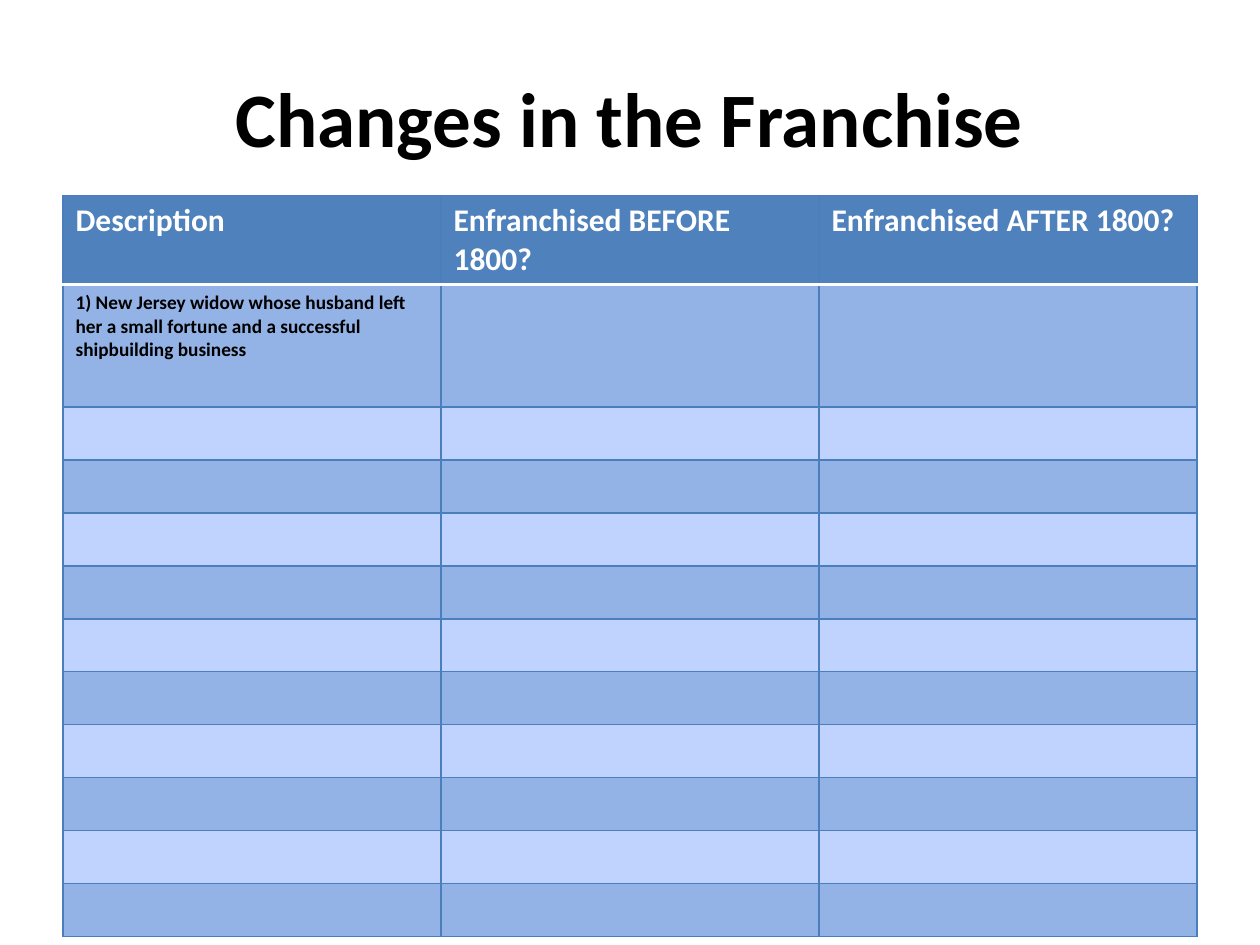
from dataclasses import dataclass

from lxml.etree import SubElement
from pptx import Presentation
from pptx.dml.color import RGBColor
from pptx.enum.text import MSO_ANCHOR, PP_ALIGN
from pptx.oxml.ns import qn
from pptx.util import Pt


@dataclass(frozen=True)
class Theme:
    font: str = "Calibri"
    ink: str = "000000"
    white: str = "FFFFFF"
    head: str = "4F81BD"
    dark: str = "93B2E5"
    light: str = "C0D3FF"
    line: str = "4B7EBC"
    title: int = 44
    label: int = 18
    body: int = 11


THEME = Theme()
HEADS = ["Description", "Enfranchised BEFORE 1800?", "Enfranchised AFTER 1800?"]
CASE = ("1) New Jersey widow whose husband left her a small fortune "
        "and a successful shipbuilding business")
ROWS = [HEADS, [CASE, "", ""]] + [[""] * 3] * 10
HEIGHTS = [51, 70] + [30.3] * 10


def style(frame, size, color):
    for para in frame.paragraphs:
        font = para.font
        font.name, font.size, font.bold = THEME.font, Pt(size), True
        font.color.rgb = RGBColor.from_string(color)


def edge(cell, side, color, width):
    props = cell._tc.get_or_add_tcPr()
    line = SubElement(props, qn(f"a:ln{side}"), w=str(Pt(width)))
    fill = SubElement(line, qn("a:solidFill"))
    SubElement(fill, qn("a:srgbClr"), val=color)


def frame_cell(cell, row):
    """Rule all four sides, with a white line under the header."""
    white_side = {0: "B", 1: "T"}.get(row)
    for side in "LRTB":
        if side == white_side:
            edge(cell, side, THEME.white, 2)
        else:
            edge(cell, side, THEME.line, 0.75)


def add_title(slide, left, top, width, height):
    box = slide.shapes.add_textbox(Pt(left), Pt(top), Pt(width), Pt(height))
    frame = box.text_frame
    frame.word_wrap = True
    frame.vertical_anchor = MSO_ANCHOR.MIDDLE
    frame.text = "Changes in the Franchise"
    frame.paragraphs[0].alignment = PP_ALIGN.CENTER
    style(frame, THEME.title, THEME.ink)


def add_grid(slide, left, top, width):
    table = slide.shapes.add_table(
        len(ROWS), len(HEADS), Pt(left), Pt(top), Pt(width), Pt(sum(HEIGHTS))
    ).table
    for col in table.columns:
        col.width = Pt(width / len(HEADS))
    for r, texts in enumerate(ROWS):
        table.rows[r].height = Pt(HEIGHTS[r])
        band = THEME.dark if r % 2 else THEME.light
        for c, text in enumerate(texts):
            cell = table.cell(r, c)
            cell.text = text
            if r == 0:
                style(cell.text_frame, THEME.label, THEME.white)
            else:
                style(cell.text_frame, THEME.body, THEME.ink)
            frame_cell(cell, r)
            cell.fill.solid()
            cell.fill.fore_color.rgb = RGBColor.from_string(band if r else THEME.head)


def main():
    deck = Presentation()
    deck.slide_width, deck.slide_height = Pt(720), Pt(540)
    slide = deck.slides.add_slide(deck.slide_layouts[6])
    add_title(slide, 36, 21.6, 648, 90)
    add_grid(slide, 36, 111.6, 648)
    deck.save("out.pptx")


if __name__ == "__main__":
    main()
